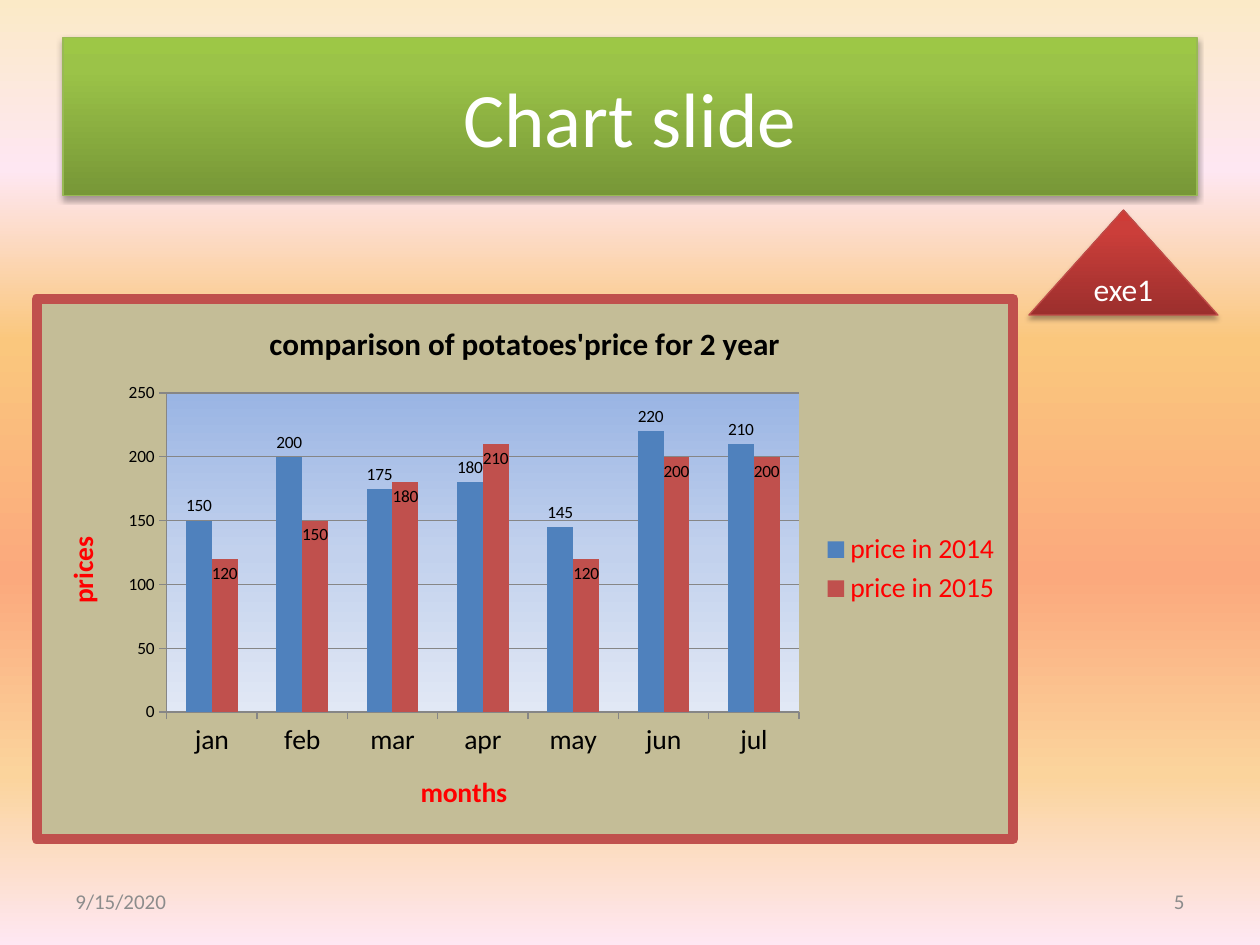
from lxml.etree import SubElement
from pptx import Presentation
from pptx.chart.data import CategoryChartData
from pptx.dml.color import RGBColor
from pptx.enum.chart import XL_CHART_TYPE, XL_LABEL_POSITION, XL_LEGEND_POSITION, XL_TICK_MARK
from pptx.enum.shapes import MSO_SHAPE
from pptx.enum.text import MSO_ANCHOR, PP_ALIGN
from pptx.oxml import parse_xml
from pptx.oxml.ns import nsdecls, qn
from pptx.util import Pt

FONT = "Calibri"
COLORS = {
    "white": "FFFFFF", "black": "000000", "red": "FF0000", "footer": "8C8C8C",
    "title line": "98B955", "badge line": "BF4C48", "axis": "868686",
    "chart": "C4BD97", "border": "C0504D", "2014": "4F81BD", "2015": "C0504D",
}
# Each gradient is a list of (percent, colour) stops and an angle in degrees.
GRADIENTS = {
    "sunset": ([(0, "FBEAC7"), (18, "FEE7F2"), (36, "FAC77D"),
                (61, "FBA97D"), (82, "FBD49C"), (100, "FEE7F2")], 90),
    "green": ([(0, "779737"), (80, "9BC348"), (100, "9DC746")], 270),
    "red": ([(0, "9C2F2D"), (80, "CB3E3A"), (100, "CE3B37")], 270),
    "plot": ([(0, "9AB5E4"), (50, "C2D1ED"), (100, "E1E8F5")], 90),
}
MONTHS = ["jan", "feb", "mar", "apr", "may", "jun", "jul"]
PRICES = {
    "2014": ([150, 200, 175, 180, 145, 220, 210], XL_LABEL_POSITION.OUTSIDE_END),
    "2015": ([120, 150, 180, 210, 120, 200, 200], XL_LABEL_POSITION.INSIDE_END),
}


def color(name):
    return RGBColor.from_string(COLORS[name])


def gradient_element(name):
    stops, angle = GRADIENTS[name]
    stop_xml = "".join(
        f'<a:gs pos="{percent * 1000}"><a:srgbClr val="{value}"/></a:gs>'
        for percent, value in stops)
    return parse_xml(
        f'<a:gradFill {nsdecls("a")} rotWithShape="1"><a:gsLst>{stop_xml}</a:gsLst>'
        f'<a:lin ang="{angle * 60000}" scaled="0"/></a:gradFill>')


def fill_gradient(fill, properties, name):
    """Set a solid fill, then swap it for the named gradient."""
    fill.solid()
    solid = properties.find(qn("a:solidFill"))
    properties.replace(solid, gradient_element(name))


def style_font(font, size, color_name, bold=None):
    font.name = FONT
    font.size = Pt(size)
    font.bold = bold
    font.color.rgb = color(color_name)


def write_text(frame, text, size, color_name, alignment):
    frame.word_wrap = True
    frame.vertical_anchor = MSO_ANCHOR.MIDDLE
    paragraph = frame.paragraphs[0]
    paragraph.alignment = alignment
    run = paragraph.add_run()
    run.text = text
    style_font(run.font, size, color_name)


def style_panel(shape, gradient, line):
    """Give a shape a gradient, a thin outline and a soft drop shadow."""
    properties = shape.element.spPr
    fill_gradient(shape.fill, properties, gradient)
    shape.line.color.rgb = color(line)
    shape.line.width = Pt(0.75)
    shape.shadow.inherit = False
    properties.find(qn("a:effectLst")).append(parse_xml(
        f'<a:outerShdw {nsdecls("a")} blurRad="{Pt(3.1)}" dist="{Pt(1.8)}" dir="5400000" '
        'rotWithShape="0"><a:srgbClr val="000000"><a:alpha val="35000"/></a:srgbClr></a:outerShdw>'))


def add_background(slide):
    fill = slide.background.fill
    fill.solid()
    fill_gradient(fill, slide.element.find(".//" + qn("p:bgPr")), "sunset")


def add_title(slide, left, top, width, height):
    title = slide.shapes.title
    title.left, title.top, title.width, title.height = left, top, width, height
    style_panel(title, "green", "title line")
    write_text(title.text_frame, "Chart slide", 44, "white", PP_ALIGN.CENTER)


def add_badge(slide, left, top, width, height):
    badge = slide.shapes.add_shape(MSO_SHAPE.ISOSCELES_TRIANGLE, left, top, width, height)
    style_panel(badge, "red", "badge line")
    write_text(badge.text_frame, "exe1", 18, "white", PP_ALIGN.CENTER)


def add_footer(slide, left, top, width, height, text, alignment):
    box = slide.shapes.add_textbox(left, top, width, height)
    write_text(box.text_frame, text, 12, "footer", alignment)


def write_chart_title(owner, text, size, color_name):
    """Title a chart or an axis."""
    owner.has_title = True
    paragraph = (owner.chart_title if hasattr(owner, "chart_title")
                 else owner.axis_title).text_frame.paragraphs[0]
    run = paragraph.add_run()
    run.text = text
    style_font(run.font, size, color_name, True)


def style_chart_areas(chart):
    """Fill the chart and plot areas and frame the chart."""
    chart_space = chart.element
    chart_space.find(qn("c:chart")).addnext(parse_xml(
        f'<c:spPr {nsdecls("c", "a")}><a:solidFill><a:srgbClr val="{COLORS["chart"]}"/></a:solidFill>'
        f'<a:ln w="{Pt(6)}"><a:solidFill><a:srgbClr val="{COLORS["border"]}"/></a:solidFill>'
        '<a:round/></a:ln></c:spPr>'))
    plot_area = chart_space.find(".//" + qn("c:plotArea"))
    SubElement(plot_area, qn("c:spPr")).append(gradient_element("plot"))


def add_price_chart(slide, left, top, width, height):
    data = CategoryChartData()
    data.categories = MONTHS
    for year, (values, _) in PRICES.items():
        data.add_series(f"price in {year}", values)
    chart = slide.shapes.add_chart(
        XL_CHART_TYPE.COLUMN_CLUSTERED, left, top, width, height, data).chart
    style_font(chart.font, 10, "black")
    write_chart_title(chart, "comparison of potatoes'price for 2 year", 18, "black")
    style_chart_areas(chart)

    chart.has_legend = True
    chart.legend.position = XL_LEGEND_POSITION.RIGHT
    chart.legend.include_in_layout = False
    style_font(chart.legend.font, 16, "red")

    for axis, title, size in ((chart.category_axis, "months", 16),
                              (chart.value_axis, "prices", 10)):
        write_chart_title(axis, title, 16, "red")
        style_font(axis.tick_labels.font, size, "black")
        axis.major_tick_mark = XL_TICK_MARK.OUTSIDE
        axis.format.line.color.rgb = color("axis")
    chart.value_axis.has_major_gridlines = True
    chart.value_axis.major_gridlines.format.line.color.rgb = color("axis")

    plot = chart.plots[0]
    plot.gap_width = 150
    plot.overlap = 0
    plot.vary_by_categories = False
    for series, (year, (_, position)) in zip(plot.series, PRICES.items()):
        series.format.fill.solid()
        series.format.fill.fore_color.rgb = color(year)
        labels = series.data_labels
        labels.show_value = True
        labels.position = position
        style_font(labels.font, 10, "black")


def main():
    presentation = Presentation()
    presentation.slide_width, presentation.slide_height = Pt(720), Pt(540)
    slide = presentation.slides.add_slide(presentation.slide_layouts.get_by_name("Title Only"))
    add_background(slide)
    add_badge(slide, Pt(588), Pt(120), Pt(108), Pt(60))
    add_title(slide, Pt(36), Pt(21.6), Pt(648), Pt(90))
    add_price_chart(slide, Pt(18), Pt(168), Pt(564), Pt(314.4))
    add_footer(slide, Pt(36), Pt(500.5), Pt(168), Pt(28.75), "9/15/2020", PP_ALIGN.LEFT)
    add_footer(slide, Pt(516), Pt(500.5), Pt(168), Pt(28.75), "5", PP_ALIGN.RIGHT)
    presentation.save("out.pptx")


if __name__ == "__main__":
    main()
